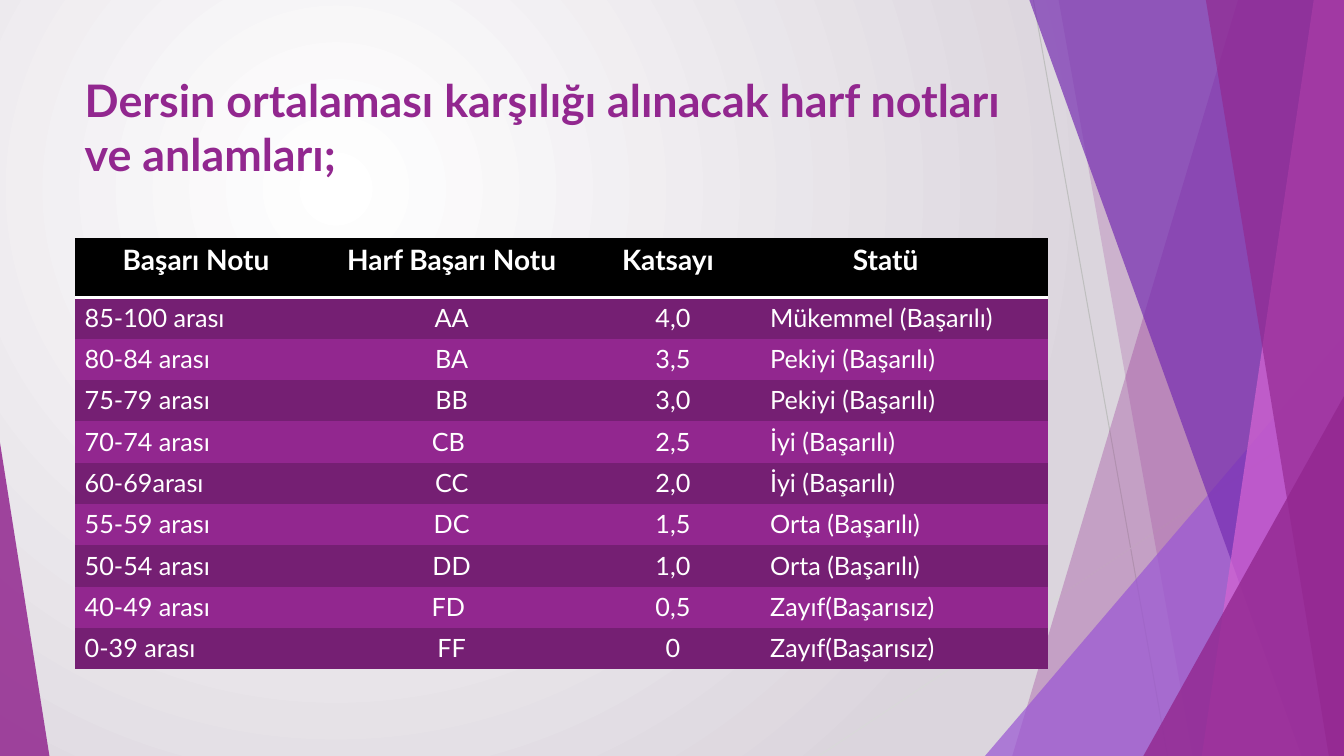
from lxml.etree import SubElement
from pptx import Presentation
from pptx.dml.color import RGBColor
from pptx.enum.shapes import MSO_CONNECTOR as Line, MSO_SHAPE as Shape
from pptx.enum.text import MSO_ANCHOR as Anchor, MSO_AUTO_SIZE as AutoSize, PP_ALIGN as Align
from pptx.oxml import parse_xml
from pptx.oxml.ns import nsdecls, qn
from pptx.util import Inches, Pt

WHITE = RGBColor(0xFF, 0xFF, 0xFF)
BLACK = RGBColor(0, 0, 0)
MIST = RGBColor(0xDB, 0xD5, 0xDD)
SILVER = RGBColor(0xBF, 0xBF, 0xBF)
PALE_GREY = RGBColor(0xD9, 0xD9, 0xD9)
PURPLE = RGBColor(0x92, 0x27, 0x8F)
DARK_PURPLE = RGBColor(0x75, 0x1F, 0x73)
LAVENDER = RGBColor(0x9B, 0x57, 0xD3)
VIOLET = RGBColor(0x76, 0x2E, 0xB1)
PINK = RGBColor(0xD6, 0x65, 0xD3)

NO_TABLE_STYLE = "{2D5ABB26-0587-4C30-8999-92F81FD0307C}"
TITLE = {"name": "Lato", "size": Pt(32), "bold": True}
HEADER = {"name": "Lato", "size": Pt(20), "bold": True}
BODY = {"name": "Lato", "size": Pt(18), "bold": False}

COLUMNS = [
    ("Başarı Notu", 2.41, Align.LEFT, 0.1),
    ("Harf Başarı Notu", 2.66, Align.CENTER, 0.1),
    ("Katsayı", 1.73, Align.CENTER, 0.2),
    ("Statü", 2.85, Align.LEFT, 0.46),
]
GRADES = [
    ("85-100 arası", "AA", "4,0", "Mükemmel (Başarılı)"),
    ("80-84 arası", "BA", "3,5", "Pekiyi (Başarılı)"),
    ("75-79 arası", "BB", "3,0", "Pekiyi (Başarılı)"),
    ("70-74 arası", "CB ", "2,5", "İyi (Başarılı)"),
    ("60-69arası", "CC", "2,0", "İyi (Başarılı)"),
    ("55-59 arası", "DC", "1,5", "Orta (Başarılı)"),
    ("50-54 arası", "DD", "1,0", "Orta (Başarılı)"),
    ("40-49 arası", "FD ", "0,5", "Zayıf(Başarısız)"),
    ("0-39 arası", "FF", "0", "Zayıf(Başarısız)"),
]


class Deck:
    def __init__(self, width, height):
        self.prs = Presentation()
        self.prs.slide_width, self.prs.slide_height = Inches(width), Inches(height)
        self.s = self.prs.slides.add_slide(self.prs.slide_layouts[5])

    def x(self, share):
        return round(self.prs.slide_width * share / 100)

    def y(self, share):
        return round(self.prs.slide_height * share / 100)

    def background(self, inner, outer):
        fill = self.s.background.fill
        fill.gradient()
        for stop, color in zip(fill.gradient_stops, (inner, outer)):
            stop.color.rgb = color
        grad = self.s._element.find(".//" + qn("a:gradFill"))
        grad.replace(grad.find(qn("a:lin")), parse_xml(
            f'<a:path {nsdecls("a")} path="circle">'
            '<a:fillToRect l="50000" t="50000" r="100000" b="100000"/></a:path>'))

    def line(self, x1, y1, x2, y2, color):
        c = self.s.shapes.add_connector(
            Line.STRAIGHT, self.x(x1), self.y(y1), self.x(x2), self.y(y2))
        c.line.color.rgb, c.line.width = color, Pt(0.75)
        SubElement(c._element.spPr, qn("a:effectLst"))

    def tint(self, sp, color, alpha):
        sp.shadow.inherit = False
        sp.line.fill.background()
        sp.fill.solid()
        sp.fill.fore_color.rgb = color
        solid = sp._element.spPr.find(qn("a:solidFill"))
        SubElement(solid[0], qn("a:alpha"), val=str(alpha * 1000))

    def panel(self, top, bottom, color, alpha):
        fb = self.s.shapes.build_freeform(self.x(top), 0)
        fb.add_line_segments([(self.x(px), self.y(py)) for px, py in
                              ((100, 0), (100, 100), (bottom, 100))])
        self.tint(fb.convert_to_shape(), color, alpha)

    def triangle(self, left, top, width, apex, color, alpha):
        sp = self.s.shapes.add_shape(Shape.ISOSCELES_TRIANGLE, self.x(left), self.y(top),
                                     self.x(width), self.y(100 - top))
        sp.adjustments[0] = apex
        self.tint(sp, color, alpha)

    def text(self, tf, words, fmt, color, align):
        p = tf.paragraphs[0]
        p.alignment = align
        r = p.add_run()
        r.text = words
        for key, value in fmt.items():
            setattr(r.font, key, value)
        r.font.color.rgb = color

    def title(self, words, left, top, width, height):
        sp = self.s.shapes.title
        sp.left, sp.top = self.x(left), self.y(top)
        sp.width, sp.height = self.x(width), self.y(height)
        tf = sp.text_frame
        for key, value in {"word_wrap": True, "auto_size": AutoSize.NONE,
                           "vertical_anchor": Anchor.TOP}.items():
            setattr(tf, key, value)
        self.text(tf, words, TITLE, PURPLE, Align.LEFT)

    def cell(self, cell, words, fmt, align, fill):
        cell.fill.solid()
        cell.fill.fore_color.rgb = fill
        self.text(cell.text_frame, words, fmt, WHITE, align)

    def table(self, left, top, columns, rows, head_height, row_height):
        width = Inches(sum(w for _, w, _, _ in columns))
        height = Inches(head_height + row_height * len(rows))
        t = self.s.shapes.add_table(len(rows) + 1, len(columns), self.x(left), self.y(top),
                                    width, height).table
        t._tbl.tblPr.find(qn("a:tableStyleId")).text = NO_TABLE_STYLE
        for i, row in enumerate(t.rows):
            row.height = Inches(row_height if i else head_height)
        for j, (name, col_width, align, margin) in enumerate(columns):
            t.columns[j].width = Inches(col_width)
            head = t.cell(0, j)
            self.cell(head, name, HEADER, Align.CENTER, BLACK)
            head.margin_right = Inches(margin)
            head._tc.get_or_add_tcPr().insert(0, parse_xml(
                f'<a:lnB {nsdecls("a")} w="{Pt(2)}"><a:solidFill>'
                f'<a:srgbClr val="{WHITE}"/></a:solidFill></a:lnB>'))
            for i, row in enumerate(rows, 1):
                self.cell(t.cell(i, j), row[j], BODY, align, DARK_PURPLE if i % 2 else PURPLE)


def main():
    d = Deck(13.33, 7.5)
    d.background(WHITE, MIST)
    d.line(76.89, 0, 86.87, 100, SILVER)
    d.line(100, 53.73, 60.92, 100, PALE_GREY)
    d.panel(92.12, 75.32, PURPLE, 30)
    d.panel(78.77, 88.75, PURPLE, 20)
    d.triangle(73.29, 44.4, 26.71, 1, LAVENDER, 72)
    for panel in ((76.59, 96.85, VIOLET, 70), (97.75, 89.42, PINK, 70),
                  (89.72, 98.87, PURPLE, 65)):
        d.panel(*panel)
    d.triangle(85.07, 52.4, 14.93, 1, PURPLE, 80)
    d.triangle(0, 58.53, 3.68, 0, PURPLE, 85)
    d.title("Dersin ortalaması karşılığı alınacak harf notları ve anlamları;",
            5.55, 8.93, 70.52, 19.2)
    d.table(5.55, 31.47, COLUMNS, GRADES, 0.59, 0.41)
    d.prs.save("out.pptx")


if __name__ == "__main__":
    main()
